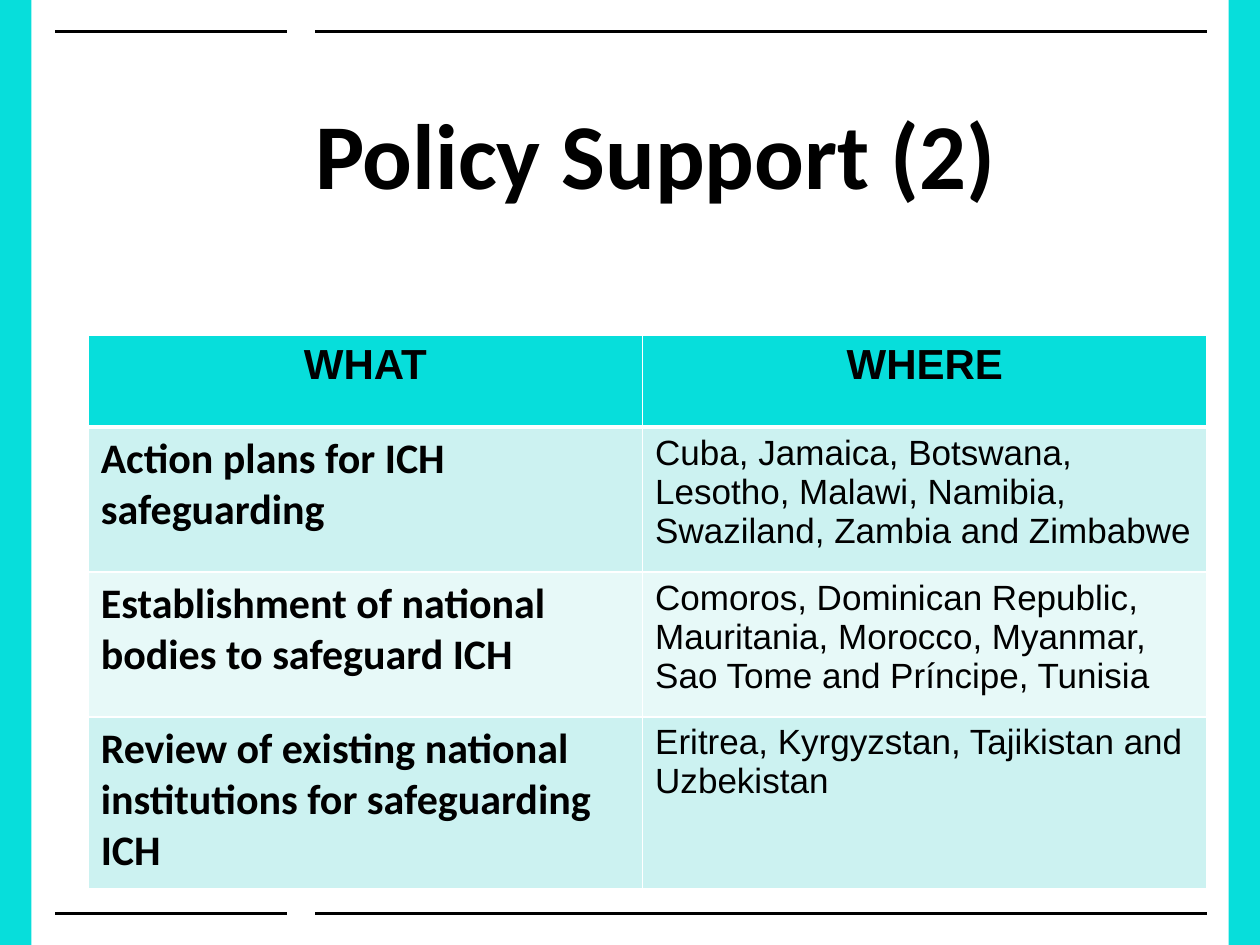
from lxml import etree
from pptx import Presentation
from pptx.dml.color import RGBColor
from pptx.enum.shapes import MSO_CONNECTOR, MSO_SHAPE
from pptx.enum.text import MSO_ANCHOR, MSO_AUTO_SIZE, PP_ALIGN
from pptx.oxml.ns import qn
from pptx.util import Inches, Pt

LINE, RECT = MSO_CONNECTOR.STRAIGHT, MSO_SHAPE.RECTANGLE
TOP, LEFT, CENTER = MSO_ANCHOR.TOP, PP_ALIGN.LEFT, PP_ALIGN.CENTER

TITLE = "Policy Support (2)"
ROWS = [
    ("WHAT", "WHERE"),
    ("Action plans for ICH safeguarding",
     "Cuba, Jamaica, Botswana, Lesotho, Malawi, Namibia, Swaziland, Zambia and Zimbabwe"),
    ("Establishment of national bodies to safeguard ICH",
     "Comoros, Dominican Republic, Mauritania, Morocco, Myanmar, "
     "Sao Tome and Príncipe, Tunisia"),
    ("Review of existing national institutions for safeguarding ICH",
     "Eritrea, Kyrgyzstan, Tajikistan and Uzbekistan"),
]
WIDTHS = (4.4, 4.48)
HEIGHTS = (0.73, 1.15, 1.15, 1.36)
COLORS = {"teal": "07DEDB", "odd": "CCF2F1", "even": "E7F9F8",
          "ink": "000000", "white": "FFFFFF"}
FONTS = {
    "title": {"name": "Calibri", "size": Pt(53), "bold": True},
    "head": {"name": "Arial", "size": Pt(24), "bold": True},
    "what": {"name": "Calibri", "size": Pt(24), "bold": True},
    "where": {"name": "Arial", "size": Pt(20), "bold": False},
}
BARS = (0, 9.75)
RULES = [(x1, x2, y) for y in (0.25, 7.25) for x1, x2 in ((0.44, 2.28), (2.5, 9.58))]


def color(key):
    return RGBColor.from_string(COLORS[key])


def write(frame, text, style, align):
    frame.text = text
    par = frame.paragraphs[0]
    par.alignment = align
    font = par.runs[0].font
    for key, value in FONTS[style].items():
        setattr(font, key, value)
    font.color.rgb = color("ink")


def add_bar(slide, x):
    bar = slide.shapes.add_shape(RECT, Inches(x), 0, Inches(0.25), Inches(7.5))
    bar.shadow.inherit = False
    bar.fill.solid()
    bar.fill.fore_color.rgb = color("teal")
    bar.line.fill.background()


def add_rule(slide, x1, x2, y):
    rule = slide.shapes.add_connector(LINE, Inches(x1), Inches(y), Inches(x2), Inches(y))
    rule.line.color.rgb = color("ink")
    rule.line.width = Pt(2)
    etree.SubElement(rule._element.spPr, qn("a:effectLst"))


def add_edges(cell, sizes):
    """Draw white cell borders; sizes maps each side to its width in points."""
    props = cell._tc.get_or_add_tcPr()
    for side, size in sizes.items():
        edge = etree.SubElement(props, qn(f"a:ln{side}"), w=str(Pt(size)))
        fill = etree.SubElement(edge, qn("a:solidFill"))
        etree.SubElement(fill, qn("a:srgbClr"), val=COLORS["white"])


def add_title(slide):
    title = slide.shapes.title
    title.left, title.top, title.width, title.height = map(Inches, (2.5, 0.77, 7.09, 0.54))
    frame = title.text_frame
    write(frame, TITLE, "title", LEFT)
    format = {"margin_left": 0, "margin_top": 0, "margin_right": 0, "margin_bottom": 0,
              "vertical_anchor": TOP, "word_wrap": True, "auto_size": MSO_AUTO_SIZE.NONE}
    for key, value in format.items():
        setattr(frame, key, value)


def add_grid(slide):
    grid = slide.shapes.add_table(
        len(ROWS), len(WIDTHS), Inches(0.7), Inches(2.66),
        Inches(sum(WIDTHS)), Inches(sum(HEIGHTS))).table
    for col, width in zip(grid.columns, WIDTHS):
        col.width = Inches(width)
    for row, height in zip(grid.rows, HEIGHTS):
        row.height = Inches(height)
    for r, texts in enumerate(ROWS):
        shade = "teal" if r == 0 else "odd" if r % 2 else "even"
        for c, text in enumerate(texts):
            cell = grid.cell(r, c)
            style = "head" if r == 0 else ("what", "where")[c]
            write(cell.text_frame, text, style, LEFT if r else CENTER)
            add_edges(cell, {"L": 1, "R": 1, "T": 3 if r == 1 else 1,
                             "B": 1 if r else 3})
            cell.fill.solid()
            cell.fill.fore_color.rgb = color(shade)


def main():
    deck = Presentation()
    deck.slide_width, deck.slide_height = Inches(10), Inches(7.5)
    slide = deck.slides.add_slide(deck.slide_layouts[5])
    for x in BARS:
        add_bar(slide, x)
    for rule in RULES:
        add_rule(slide, *rule)
    add_title(slide)
    add_grid(slide)
    deck.save("out.pptx")


if __name__ == "__main__":
    main()
